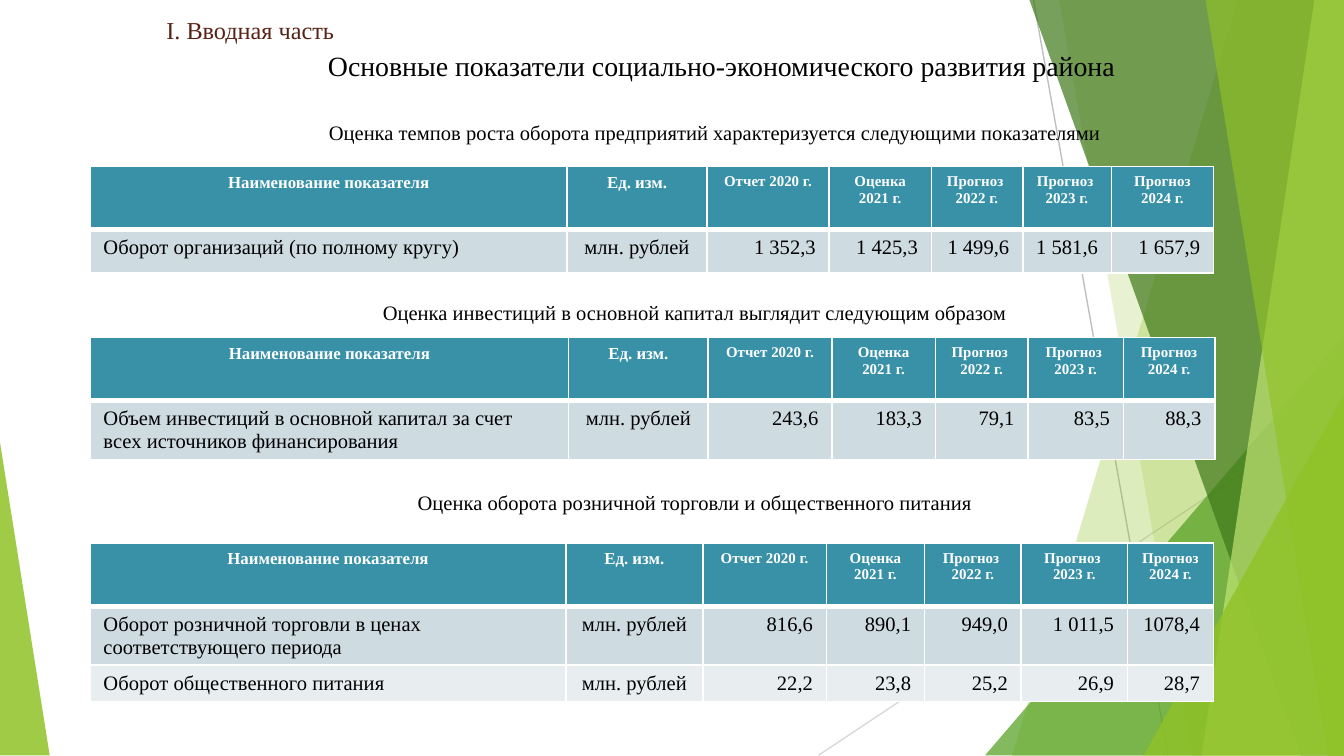
from pptx import Presentation
from pptx import util as u
from pptx.dml.color import RGBColor
from pptx.enum import shapes, text
from pptx.oxml.ns import qn
from lxml import etree

FONT = "Times New Roman"
LEFT, MID, RIGHT = text.PP_ALIGN.LEFT, text.PP_ALIGN.CENTER, text.PP_ALIGN.RIGHT
WIDE = u.Inches(10)
HIGH = WIDE * 9 // 16

LINES = [((7.69, 0), (8.69, 5.62), "BFBFBF"), ((10, 3.02), (6.09, 5.62), "D9D9D9")]
BACK = [
    ("band", (9.21, 10, 10, 7.53), "90C226", 30),
    ("band", (7.88, 10, 10, 8.87), "90C226", 20),
    ("peak", (7.33, 2.5, 2.67, 3.12, 1), "54A021", 72),
    ("band", (7.66, 10, 10, 9.68), "3F7819", 70),
    ("band", (9.78, 10, 10, 8.94), "C0E474", 70),
    ("band", (8.97, 10, 10, 9.88), "90C226", 65),
    ("peak", (8.51, 2.94, 1.49, 2.68, 1), "90C226", 80),
    ("peak", (0, 3.29, 0.37, 2.33, 0), "90C226", 85),
]
PART = "I. Вводная часть"
TITLE = "Основные показатели социально-экономического развития района"
HEAD = [
    ["Наименование показателя"], ["Ед. изм."], ["Отчет 2020 г."],
    ["Оценка", "2021 г."], ["Прогноз ", "2022 г."], ["Прогноз ", "2023 г."],
    ["Прогноз 2024 г."],
]
UNIT = "млн. рублей"
TABLES = [
    {
        "note": "Оценка темпов роста оборота предприятий характеризуется следующими показателями",
        "box": (1.13, 0.84, 8.38, 0.32),
        "top": 1.24,
        "cols": (3.55, 1.04, 0.91, 0.76, 0.68, 0.66, 0.76),
        "tall": (0.47, 0.32),
        "rows": [("Оборот организаций (по полному кругу)", UNIT,
                  "1 352,3", "1 425,3", "1 499,6", "1 581,6", "1 657,9")],
    },
    {
        "note": "Оценка инвестиций в основной капитал выглядит следующим образом",
        "box": (0.67, 2.18, 9, 0.32),
        "top": 2.51,
        "cols": (3.56, 1.04, 0.92, 0.77, 0.69, 0.71, 0.68),
        "tall": (0.47, 0.44),
        "rows": [("Объем инвестиций в основной капитал за счет всех источников финансирования", UNIT,
                  "243,6", "183,3", "79,1", "83,5", "88,3")],
    },
    {
        "note": "Оценка оборота розничной торговли и общественного питания",
        "box": (0.67, 3.6, 9, 0.32),
        "top": 4.04,
        "cols": (3.54, 1.02, 0.92, 0.73, 0.72, 0.79, 0.64),
        "tall": (0.47, 0.44, 0.27),
        "rows": [("Оборот розничной торговли в ценах соответствующего периода", UNIT,
                  "816,6", "890,1", "949,0", "1 011,5", "1078,4"),
                 ("Оборот общественного питания", UNIT,
                  "22,2", "23,8", "25,2", "26,9", "28,7")],
    },
]
FILLS = ("3891A7", "CEDBE1", "E8EEF0")


def color(code):
    return RGBColor.from_string(code)


def paint(shape, code, alpha):
    shape.shadow.inherit = False
    shape.line.fill.background()
    shape.fill.solid()
    shape.fill.fore_color.rgb = color(code)
    tone = shape._element.spPr.find(qn("a:solidFill"))[0]
    etree.SubElement(tone, qn("a:alpha"), val=str(alpha * 1000))


def write(frame, paras, size, code, align, bold=False):
    for i, words in enumerate(paras):
        para = frame.paragraphs[0] if i == 0 else frame.add_paragraph()
        para.alignment = align
        run = para.add_run()
        run.text = words
        font = run.font
        font.name, font.size, font.bold = FONT, u.Pt(size), bold
        font.color.rgb = color(code)


def label(slide, box, words, size, code, align):
    frame = slide.shapes.add_textbox(*map(u.Inches, box)).text_frame
    frame.word_wrap = True
    write(frame, [words], size, code, align)
    return frame


def backdrop(slide):
    for start, end, code in LINES:
        line = slide.shapes.add_connector(
            shapes.MSO_CONNECTOR.STRAIGHT, *map(u.Inches, start + end))
        line.line.color.rgb = color(code)
        line.line.width = u.Pt(0.75)
        etree.SubElement(line._element.spPr, qn("a:effectLst"))
    for kind, dims, code, alpha in BACK:
        if kind == "band":
            pts = [(u.Inches(x), y) for x, y in zip(dims, (0, 0, HIGH, HIGH))]
            pen = slide.shapes.build_freeform(*pts[0])
            pen.add_line_segments(pts[1:], close=True)
            shape = pen.convert_to_shape()
        else:
            shape = slide.shapes.add_shape(
                shapes.MSO_SHAPE.ISOSCELES_TRIANGLE, *map(u.Inches, dims[:4]))
            shape.adjustments[0] = dims[4]
        paint(shape, code, alpha)


def border(cell, row):
    props = cell._tc.get_or_add_tcPr()
    wide = {"L": 0.96, "R": 0.96, "T": 3 if row == 1 else 0.96, "B": 3 if row == 0 else 0.96}
    for i, (side, size) in enumerate(wide.items()):
        line = etree.Element(qn("a:ln" + side), w=str(u.Pt(size)))
        fill = etree.SubElement(line, qn("a:solidFill"))
        etree.SubElement(fill, qn("a:srgbClr"), val="FFFFFF")
        props.insert(i, line)


def grid(slide, data):
    cols, tall = data["cols"], data["tall"]
    table = slide.shapes.add_table(
        len(tall), len(cols), u.Inches(0.67), u.Inches(data["top"]),
        u.Inches(sum(cols)), u.Inches(sum(tall))).table
    for col, wide in zip(table.columns, cols):
        col.width = u.Inches(wide)
    for row, high in zip(table.rows, tall):
        row.height = u.Inches(high)
    body = [[[words] for words in row] for row in data["rows"]]
    for r, row in enumerate([HEAD] + body):
        for c, paras in enumerate(row):
            cell = table.cell(r, c)
            cell.fill.solid()
            cell.fill.fore_color.rgb = color(FILLS[r])
            cell.margin_bottom = u.Inches(0.02)
            border(cell, r)
            if r == 0:
                write(cell.text_frame, paras, 9 if c < 2 else 8, "FFFFFF", MID, True)
            else:
                align = (LEFT, MID, RIGHT)[min(c, 2)]
                write(cell.text_frame, paras, 11, "000000", align)


def main():
    deck = Presentation()
    deck.slide_width, deck.slide_height = WIDE, HIGH
    slide = deck.slides.add_slide(deck.slide_layouts[6])
    backdrop(slide)
    part = label(slide, (1.14, 0, 8.36, 0.45), PART, 13, "572314", LEFT)
    part.vertical_anchor = text.MSO_ANCHOR.MIDDLE
    title = label(slide, (1.04, 0.22, 7.64, 0.62), TITLE, 14.9, "000000", MID)
    title.margin_left, title.margin_top = u.Inches(1.11), u.Inches(0.14)
    for data in TABLES:
        label(slide, data["box"], data["note"], 11, "000000", MID)
        grid(slide, data)
    deck.save("out.pptx")


if __name__ == "__main__":
    main()
